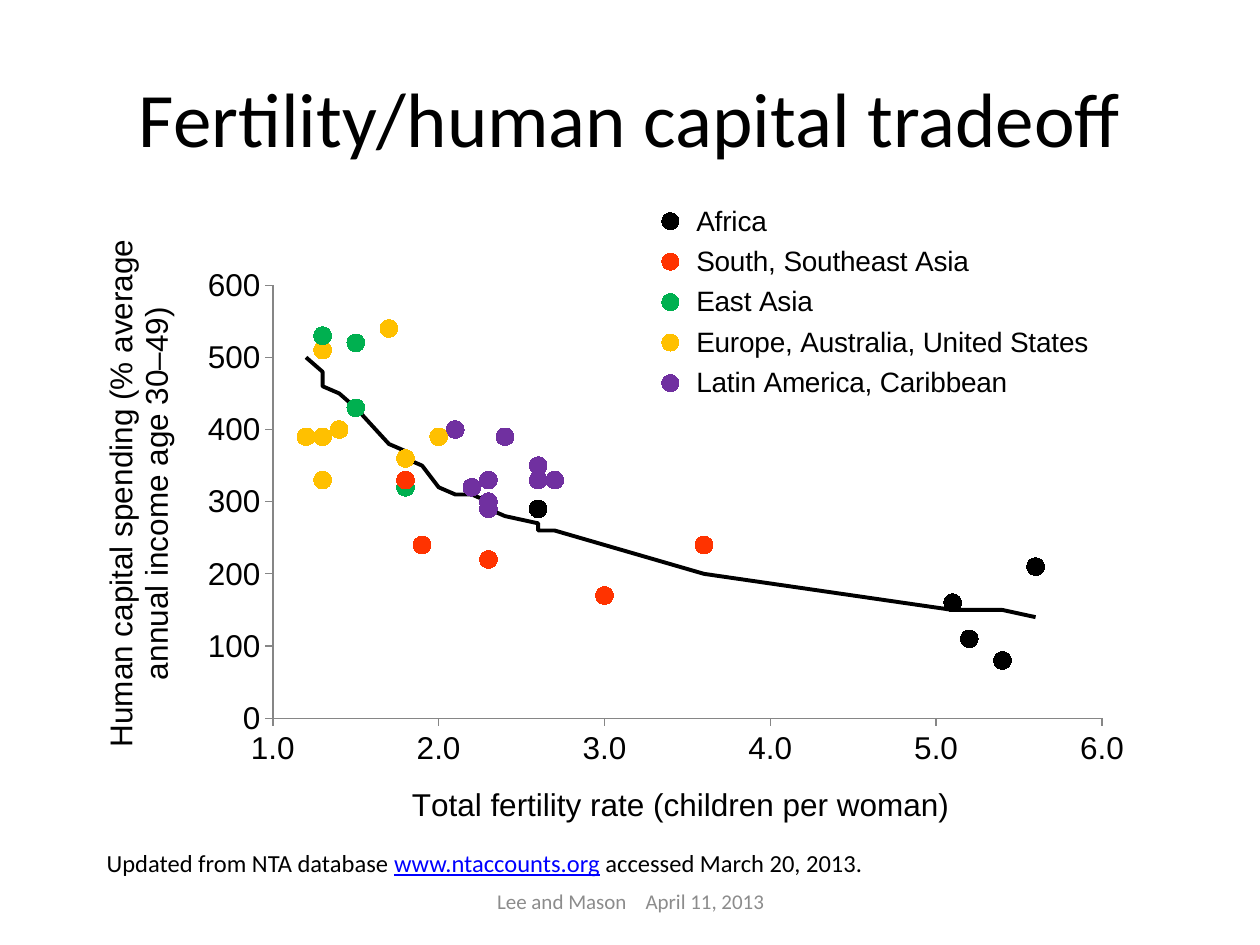
from lxml import etree
from pptx import Presentation
from pptx.chart.data import XyChartData
from pptx.dml.color import RGBColor
from pptx.enum.chart import (XL_CHART_TYPE, XL_LEGEND_POSITION,
                             XL_MARKER_STYLE, XL_TICK_MARK)
from pptx.enum.text import MSO_ANCHOR, PP_ALIGN
from pptx.oxml.ns import qn
from pptx.util import Cm, Pt

SCATTER = XL_CHART_TYPE.XY_SCATTER
LEGEND_TOP = XL_LEGEND_POSITION.TOP
CIRCLE, NO_MARKER = XL_MARKER_STYLE.CIRCLE, XL_MARKER_STYLE.NONE
TICK_OUT, TICK_NONE = XL_TICK_MARK.OUTSIDE, XL_TICK_MARK.NONE
LEFT, CENTER = PP_ALIGN.LEFT, PP_ALIGN.CENTER
TOP, MIDDLE = MSO_ANCHOR.TOP, MSO_ANCHOR.MIDDLE

BLACK = RGBColor(0x00, 0x00, 0x00)
RED = RGBColor(0xFF, 0x33, 0x00)
GREEN = RGBColor(0x00, 0xB0, 0x50)
AMBER = RGBColor(0xFF, 0xC0, 0x00)
PURPLE = RGBColor(0x70, 0x30, 0xA0)
GREY = RGBColor(0x8C, 0x8C, 0x8C)
AXIS_GREY = RGBColor(0x86, 0x86, 0x86)
LINK_BLUE = RGBColor(0x00, 0x00, 0xFF)

# Fertility rate of each country, in rising order
FERTILITY = [1.2, 1.3, 1.3, 1.3, 1.3, 1.4, 1.5, 1.5, 1.7, 1.8, 1.8, 1.8, 1.8,
             1.8, 1.9, 2.0, 2.1, 2.2, 2.3, 2.3, 2.3, 2.3, 2.4, 2.6, 2.6, 2.6,
             2.7, 3.0, 3.6, 5.1, 5.2, 5.4, 5.6]

# Region: colour and spending by country's place in FERTILITY
REGIONS = {
    "Africa": (BLACK, {24: 290, 29: 160, 30: 110, 31: 80, 32: 210}),
    "South, Southeast Asia": (RED, {12: 330, 14: 240, 20: 220, 27: 170,
                                    28: 240}),
    "East Asia": (GREEN, {2: 530, 6: 520, 7: 430, 9: 320}),
    "Europe, Australia, United States": (AMBER, {
        0: 390, 1: 510, 3: 390, 4: 330, 5: 400, 8: 540, 10: 360, 11: 360,
        13: 360, 15: 390}),
    "Latin America, Caribbean": (PURPLE, {
        16: 400, 17: 320, 18: 290, 19: 300, 21: 330, 22: 390, 23: 350,
        25: 330, 26: 330}),
}

# Fitted curve over all countries
CURVE_NAME = "Series 6"
CURVE = [500, 480, 480, 470, 460, 450, 430, 430, 380, 370, 360, 360, 360, 360,
         350, 320, 310, 310, 300, 300, 300, 290, 280, 270, 260, 260, 260, 240,
         200, 150, 150, 150, 140]


def style_font(font, size, color=BLACK, name="Arial"):
    font.name, font.size, font.bold = name, Pt(size), False
    font.color.rgb = color


def add_text(slide, box, runs, size, color=BLACK, align=LEFT, anchor=TOP):
    """Add a one-paragraph text box and return its runs."""
    frame = slide.shapes.add_textbox(*(Cm(v) for v in box)).text_frame
    frame.word_wrap = True
    frame.vertical_anchor = anchor
    paragraph = frame.paragraphs[0]
    paragraph.alignment = align
    style_font(paragraph.font, size, color, "Calibri")
    for text in runs:
        paragraph.add_run().text = text
    return paragraph.runs


def set_layout(parent, inner=False, **percents):
    """Place a chart part by percentages of the chart's size."""
    for old in parent.findall(qn("c:layout")):
        parent.remove(old)
    layout = etree.Element(qn("c:layout"))
    manual = etree.SubElement(layout, qn("c:manualLayout"))
    if inner:
        etree.SubElement(manual, qn("c:layoutTarget"), val="inner")
    for side in "xy":
        etree.SubElement(manual, qn(f"c:{side}Mode"), val="edge")
    for side, value in percents.items():
        etree.SubElement(manual, qn(f"c:{side}"), val=f"{value / 100:.3f}")
    overlay = parent.find(qn("c:overlay"))
    parent.insert(0 if overlay is None else parent.index(overlay), layout)


def style_axis(axis, title, low, high, step, number_format, x, y):
    axis.minimum_scale, axis.maximum_scale = low, high
    axis.major_unit = step
    axis.has_major_gridlines = False
    axis.major_tick_mark, axis.minor_tick_mark = TICK_OUT, TICK_NONE
    axis.tick_labels.number_format = number_format
    axis.tick_labels.number_format_is_linked = False
    style_font(axis.tick_labels.font, 18)
    axis.format.line.color.rgb = AXIS_GREY
    axis.format.line.width = Pt(0.75)
    paragraph = axis.axis_title.text_frame.paragraphs[0]
    paragraph.text = title
    style_font(paragraph.font, 18)
    set_layout(axis.axis_title._element, x=x, y=y)


def style_dots(series, color):
    series.format.line.fill.background()
    marker = series.marker
    marker.style, marker.size = CIRCLE, 10
    marker.format.fill.solid()
    marker.format.fill.fore_color.rgb = color
    marker.format.line.color.rgb = color


def drop_empty_points(series):
    """Leave out the points of countries in other regions."""
    for point in list(series._element.iter(qn("c:pt"))):
        if point.findtext(qn("c:v")) in ("None", "", None):
            point.getparent().remove(point)


def style_legend(chart, hidden_index):
    chart.has_legend = True
    legend = chart.legend
    legend.position = LEGEND_TOP
    legend.include_in_layout = False
    style_font(legend.font, 16)
    entry = etree.Element(qn("c:legendEntry"))
    etree.SubElement(entry, qn("c:idx"), val=str(hidden_index))
    etree.SubElement(entry, qn("c:delete"), val="1")
    legend._element.find(qn("c:legendPos")).addnext(entry)
    set_layout(legend._element, x=52.7, y=5.5, w=40, h=30.7)


def add_tradeoff_chart(slide):
    data = XyChartData()
    spending = {name: [by_country.get(i) for i in range(len(FERTILITY))]
                for name, (_, by_country) in REGIONS.items()}
    spending[CURVE_NAME] = CURVE
    for name, values in spending.items():
        series = data.add_series(name)
        for rate, value in zip(FERTILITY, values):
            series.add_data_point(rate, value)
    chart = slide.shapes.add_chart(SCATTER, Cm(0.84), Cm(3.18), Cm(22.96),
                                   Cm(13.97), data).chart
    chart.has_title = False
    style_font(chart.font, 18)

    # Dots for the regions, a plain line for the curve
    plot = chart.plots[0]
    plot.vary_by_categories = False
    *regions, curve = plot.series
    for series, (color, _) in zip(regions, REGIONS.values()):
        drop_empty_points(series)
        style_dots(series, color)
    curve.marker.style = NO_MARKER
    curve.format.line.color.rgb = BLACK
    curve.format.line.width = Pt(2.25)
    for series in plot.series:
        series.smooth = False

    # Axes, legend and plot area
    style_axis(chart.category_axis, "Total fertility rate (children per woman)",
               1, 6, 1, "0.0", x=32, y=89.6)
    style_axis(chart.value_axis,
               "Human capital spending (% average annual income age 30–49)",
               0, 600, 100, "0", x=4.6, y=11)
    style_legend(chart, len(regions))
    set_layout(chart._chartSpace.find(f".//{qn('c:plotArea')}"), inner=True,
               x=20.3, y=18.4, w=72.8, h=62.5)


def main():
    prs = Presentation()
    prs.slide_width, prs.slide_height = Cm(25.4), Cm(19.05)
    slide = prs.slides.add_slide(prs.slide_layouts[6])

    add_tradeoff_chart(slide)

    # Title
    add_text(slide, (1.27, 0.76, 22.86, 3.18),
             ["Fertility/human capital tradeoff"], 44,
             align=CENTER, anchor=MIDDLE)

    # Footer, with a widened gap between authors and date
    _, gap, _ = add_text(slide, (8.69, 17.65, 8.05, 1.02),
                         ["Lee and Mason", " ", "April 11, 2013"],
                         12, GREY, CENTER, MIDDLE)
    gap._r.get_or_add_rPr().set("spc", "800")

    # Data source
    _, address, _ = add_text(
        slide, (1.9, 16.97, 20.32, 0.86),
        ["Updated from NTA database ", "www.ntaccounts.org",
         " accessed March 20, 2013."], 14)
    address.font.color.rgb = LINK_BLUE
    address.font.underline = True

    prs.save("out.pptx")


if __name__ == "__main__":
    main()
